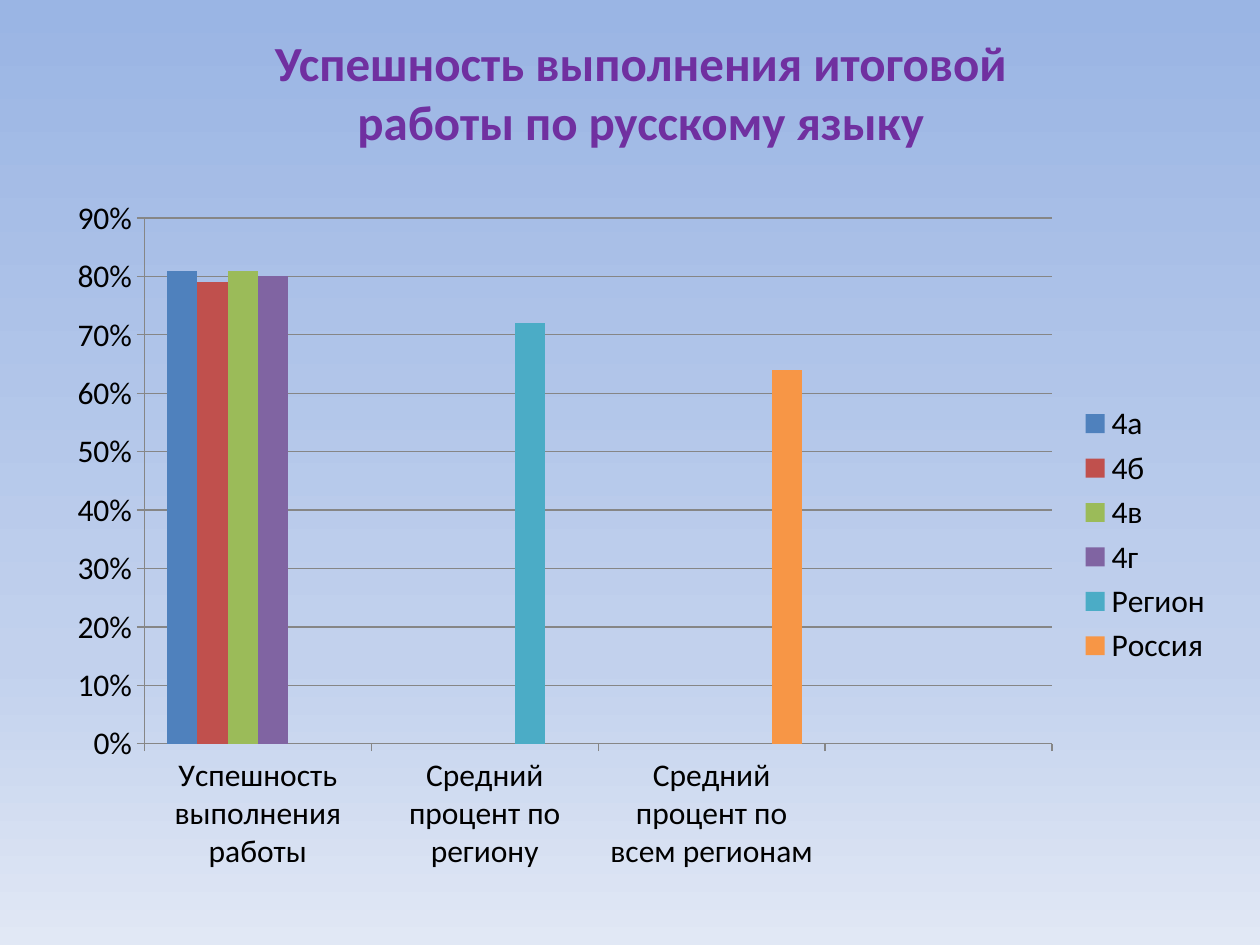
from copy import deepcopy

from pptx import Presentation
from pptx.chart.data import CategoryChartData
from pptx.dml.color import RGBColor as Rgb
from pptx.enum.chart import XL_CHART_TYPE as Kind
from pptx.enum.chart import XL_LEGEND_POSITION as Side
from pptx.enum.chart import XL_TICK_MARK as Tick
from pptx.enum.text import MSO_ANCHOR as Anchor
from pptx.enum.text import PP_ALIGN as Align
from pptx.util import Cm, Pt

COLORS = {
    "title": "7030A0", "text": "000000", "grid": "868686",
    "top": "9AB5E4", "mid": "C2D1ED", "low": "E1E8F5",
    "4а": "4F81BD", "4б": "C0504D", "4в": "9BBB59",
    "4г": "8064A2", "Регион": "4BACC6", "Россия": "F79646",
}


def color(name):
    return Rgb.from_string(COLORS[name])


deck = Presentation()
deck.slide_width, deck.slide_height = Cm(25.4), Cm(19.05)
slide = deck.slides.add_slide(deck.slide_layouts[5])

# Background: three stops from top to bottom
fill = slide.background.fill
fill.gradient()
fill.gradient_angle = 270
first = fill._fill._gradFill.gsLst[0]
first.addnext(deepcopy(first))
for stop, (name, pos) in zip(fill.gradient_stops,
                             [("top", 0), ("mid", 0.7), ("low", 1)]):
    stop.color.rgb = color(name)
    stop.position = pos

# Title
title = slide.shapes.title
title.left, title.top = Cm(3.91), Cm(0.53)
title.width, title.height = Cm(18.01), Cm(2.64)
frame = title.text_frame
frame.text = "Успешность выполнения итоговой работы по русскому языку"
frame.word_wrap = True
frame.vertical_anchor = Anchor.MIDDLE
par = frame.paragraphs[0]
par.alignment = Align.CENTER
par.font.name, par.font.size, par.font.bold = "Calibri", Pt(28), True
par.font.color.rgb = color("title")

# Chart data: each series fills one group, the fourth group is blank
data = CategoryChartData(number_format="0%")
data.categories = ["Успешность выполнения работы", "Средний процент по региону",
                   "Средний процент по всем регионам", ""]
for name, group, value in [("4а", 0, 0.81), ("4б", 0, 0.79), ("4в", 0, 0.81),
                           ("4г", 0, 0.8), ("Регион", 1, 0.72),
                           ("Россия", 2, 0.64)]:
    data.add_series(name, [value if i == group else None for i in range(4)])

# Chart
chart = slide.shapes.add_chart(Kind.COLUMN_CLUSTERED, Cm(1.09), Cm(3.73),
                               Cm(23.62), Cm(14.1), data).chart
chart.has_title = False
chart.font.name, chart.font.size = "Calibri", Pt(18)
chart.font.color.rgb = color("text")
chart.has_legend = True
chart.legend.position = Side.RIGHT
chart.legend.include_in_layout = False

# Columns
plot = chart.plots[0]
plot.gap_width, plot.overlap = 150, 0
plot.vary_by_categories = False
for series in plot.series:
    series.format.fill.solid()
    series.format.fill.fore_color.rgb = color(series.name)

# Axes and grid
values = chart.value_axis
values.minimum_scale, values.maximum_scale = 0, 0.9
values.major_unit = 0.1
values.has_major_gridlines = True
values.tick_labels.number_format = "0%"
values.tick_labels.number_format_is_linked = False
for axis in (chart.category_axis, values):
    axis.major_tick_mark = Tick.OUTSIDE
    axis.minor_tick_mark = Tick.NONE
for part in (chart.category_axis, values, values.major_gridlines):
    part.format.line.color.rgb = color("grid")
    part.format.line.width = Pt(0.75)

deck.save("out.pptx")
